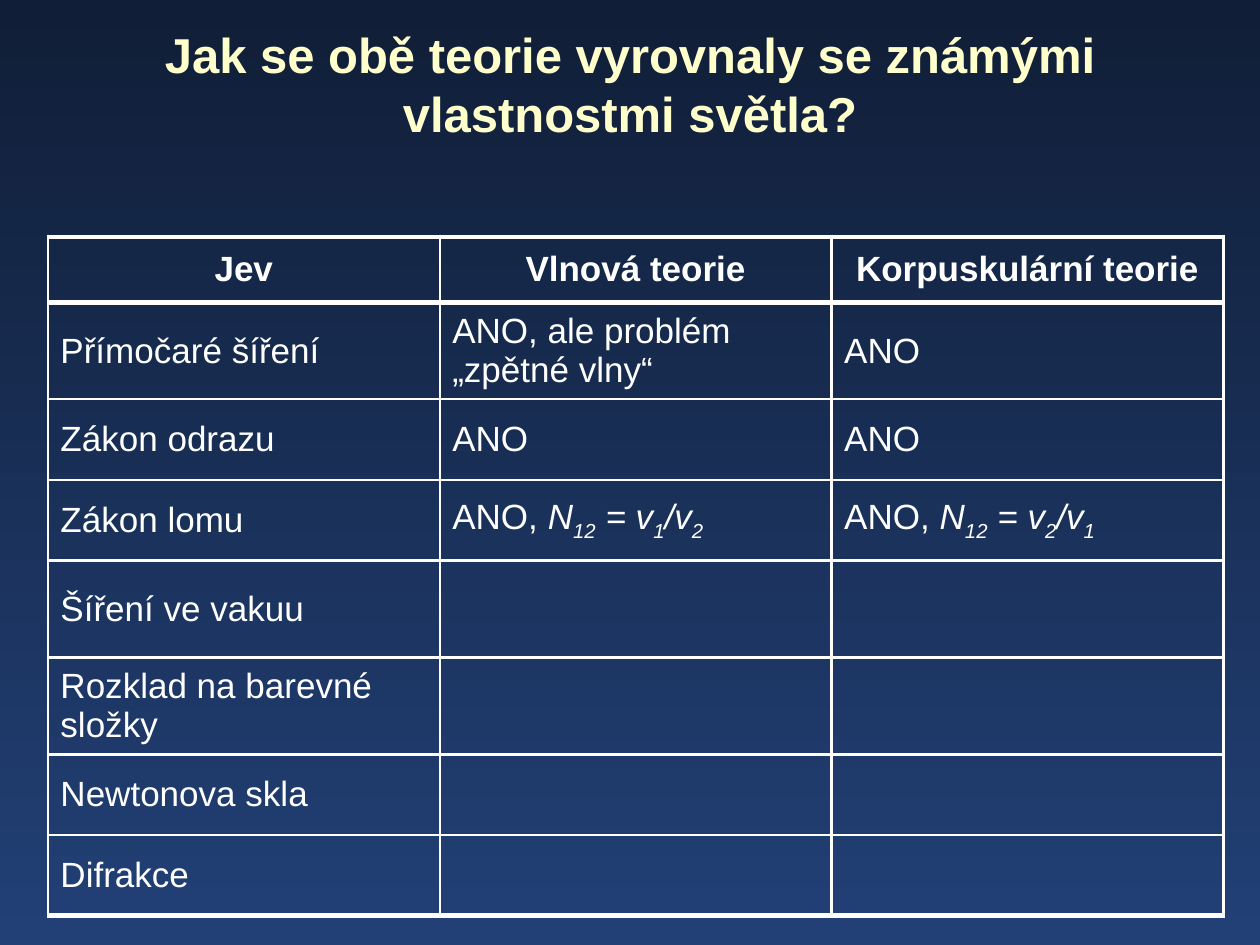
from lxml import etree
from pptx import Presentation
from pptx.dml.color import RGBColor
from pptx.enum.text import MSO_ANCHOR, MSO_AUTO_SIZE, PP_ALIGN
from pptx.oxml.ns import qn
from pptx.util import Inches, Pt

MID, CENTER, LEFT = MSO_ANCHOR.MIDDLE, PP_ALIGN.CENTER, PP_ALIGN.LEFT
NO_FIT = MSO_AUTO_SIZE.NONE
COLORS = {"top": "101E37", "base": "224076", "title": "FFFFCC", "text": "FFFFFF"}
TITLE = "Jak se obě teorie vyrovnaly se známými vlastnostmi světla?"
# After "*" text is italic; between "_" marks it is subscript
ROWS = [
    ["Jev", "Vlnová teorie", "Korpuskulární teorie"],
    ["Přímočaré šíření", "ANO, ale problém „zpětné vlny“", "ANO"],
    ["Zákon odrazu", "ANO", "ANO"],
    ["Zákon lomu", "ANO, *N_12_ = v_1_/v_2_", "ANO, *N_12_ = v_2_/v_1_"],
    ["Šíření ve vakuu", "", ""],
    ["Rozklad na barevné složky", "", ""],
    ["Newtonova skla", "", ""],
    ["Difrakce", "", ""],
]
HEAD, LOW, TALL = 0.52, 0.64, 0.77
HEIGHTS = [HEAD, TALL, LOW, LOW, TALL, TALL, LOW, LOW]
COL = 3.11
THIN, THICK = 1.5, 3


def rgb(name):
    return RGBColor.from_string(COLORS[name])


class Deck:
    def __init__(self):
        self.prs = Presentation()
        self.prs.slide_width, self.prs.slide_height = Inches(10), Inches(7.5)
        self.slide = self.prs.slides.add_slide(self.prs.slide_layouts[5])

    def back(self):
        fill = self.slide.background.fill
        fill.gradient()
        fill.gradient_angle = 270
        for stop, name in zip(fill.gradient_stops, ("top", "base")):
            stop.color.rgb = rgb(name)

    def style(self, font, color, **form):
        for key, val in {"name": "Arial", **form}.items():
            setattr(font, key, val)
        font.color.rgb = rgb(color)

    def title(self, text, left, top, width, height):
        box = self.slide.shapes.title
        place = {"left": left, "top": top, "width": width, "height": height}
        for key, val in place.items():
            setattr(box, key, Inches(val))
        frame = box.text_frame
        frame.text = text
        frame.auto_size, frame.vertical_anchor = NO_FIT, MID
        para = frame.paragraphs[0]
        para.alignment = CENTER
        self.style(para.runs[0].font, "title", size=Pt(28), bold=True)

    def label(self, cell, text, head):
        para = cell.text_frame.paragraphs[0]
        para.alignment = CENTER if head else LEFT
        space = etree.Element(qn("a:spcBef"))
        etree.SubElement(space, qn("a:spcPct"), val="20000")
        para._p.get_or_add_pPr().insert(0, space)
        for slant, part in enumerate(text.split("*")):
            for sub, piece in enumerate(part.split("_")):
                if not piece:
                    continue
                run = para.add_run()
                run.text = piece
                self.style(run.font, "text", size=Pt(20), bold=head, italic=bool(slant))
                if sub % 2:
                    run.font._element.set("baseline", "-25000")

    def border(self, cell, top, base):
        props = cell._tc.get_or_add_tcPr()
        sides = {"L": THIN, "R": THIN, "T": top, "B": base}
        for at, (side, width) in enumerate(sides.items()):
            line = etree.Element(qn(f"a:ln{side}"), w=str(Pt(width)))
            fill = etree.SubElement(line, qn("a:solidFill"))
            etree.SubElement(fill, qn("a:srgbClr"), val=COLORS["text"])
            props.insert(at, line)

    def table(self, rows, left, top):
        cols = len(rows[0])
        frame = self.slide.shapes.add_table(
            len(rows), cols, Inches(left), Inches(top),
            Inches(COL * cols), Inches(sum(HEIGHTS)))
        grid = frame.table
        grid.first_row = grid.horz_banding = False
        for col in grid.columns:
            col.width = Inches(COL)
        for at, texts in enumerate(rows):
            grid.rows[at].height = Inches(HEIGHTS[at])
            head = at == 0
            over = THICK if at < 2 else THIN
            under = THICK if at in (0, len(rows) - 1) else THIN
            for cell, text in zip(grid.rows[at].cells, texts):
                cell.fill.background()
                cell.vertical_anchor = MID
                cell.margin_left = cell.margin_right = Inches(0.05 if head else 0.1)
                self.label(cell, text, head)
                self.border(cell, over, under)


def main():
    deck = Deck()
    deck.back()
    # Comparison of the two theories
    deck.table(ROWS, 0.38, 1.88)
    # Heading
    deck.title(TITLE, 0.75, 0.25, 8.5, 0.83)
    deck.prs.save("out.pptx")


if __name__ == "__main__":
    main()
